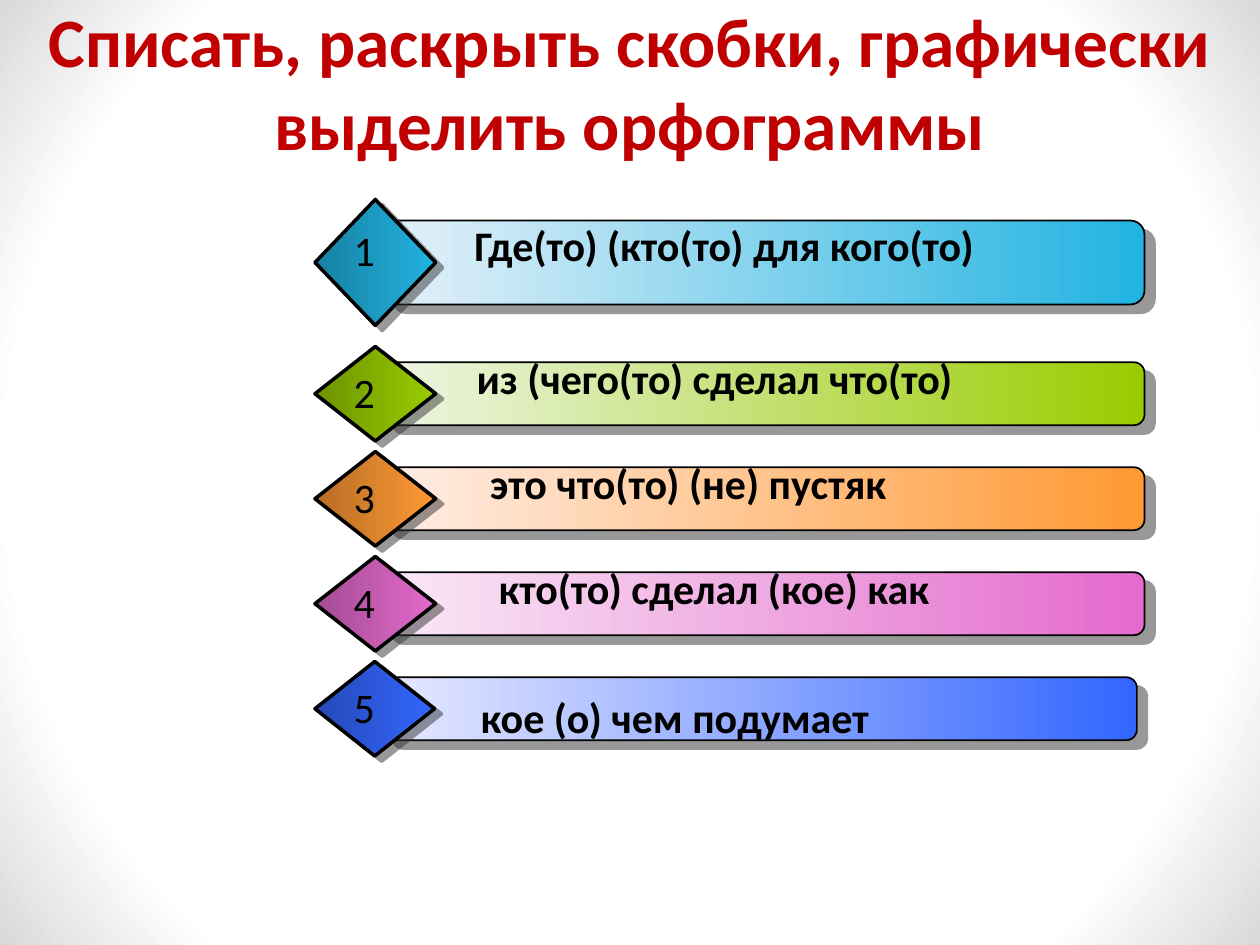
from lxml.etree import SubElement
from pptx import Presentation
from pptx.dml.color import RGBColor
from pptx.enum.shapes import MSO_SHAPE
from pptx.enum.text import MSO_ANCHOR, PP_ALIGN
from pptx.oxml.ns import qn
from pptx.util import Inches, Pt

THEME = {
    "font": "Calibri", "title": "C00000", "text": "000000", "line": "000000",
    "shadow": "333333", "page": ("FFFFFF", "D9D9D9"),
    "title_size": 39.6, "text_size": 24,
}

prs = Presentation()
prs.slide_width, prs.slide_height = Inches(10), Inches(7.5)
UNIT = prs.slide_width / 120  # grid of 120 columns by 90 rows
s = prs.slides.add_slide(prs.slide_layouts[6])


def add_panel(kind, box, colors, line=0, shadow=0, angle=0):
    """Add a gradient shape, with an optional outline and offset shadow."""
    sp = s.shapes.add_shape(kind, *(round(v * UNIT) for v in box))
    sp.fill.gradient()
    sp.fill.gradient_angle = 0
    for stop, color, pos in zip(sp.fill.gradient_stops, colors, (0, 1)):
        stop.color.rgb = RGBColor.from_string(color)
        stop.position = pos
    if line:
        sp.line.color.rgb = RGBColor.from_string(THEME["line"])
        sp.line.width = Pt(line)
    else:
        sp.line.fill.background()
    sp.shadow.inherit = False
    if shadow:
        effects = sp._element.spPr.find(qn("a:effectLst"))
        outer = SubElement(effects, qn("a:outerShdw"), dist=str(Pt(shadow)),
                           dir=str(angle * 60000), algn="ctr", rotWithShape="0")
        color = SubElement(outer, qn("a:srgbClr"), val=THEME["shadow"])
        SubElement(color, qn("a:alpha"), val="50000")
    return sp


def add_text(text, box, size, color, bold=False, wrap=True):
    """Add a one-paragraph text box."""
    tf = s.shapes.add_textbox(*(round(v * UNIT) for v in box)).text_frame
    tf.word_wrap = wrap
    p = tf.paragraphs[0]
    p.text = text
    p.font.name, p.font.size, p.font.bold = THEME["font"], Pt(size), bold
    p.font.color.rgb = RGBColor.from_string(color)
    return tf


# Page with a radial shade towards the corners
page = add_panel(MSO_SHAPE.RECTANGLE, (0, 0, 120, 90), THEME["page"])
page.fill.gradient_stops[0].position = 0.79
grad = page._element.spPr.find(qn("a:gradFill"))
grad.remove(grad.find(qn("a:lin")))
radial = SubElement(grad, qn("a:path"), path="circle")
SubElement(radial, qn("a:fillToRect"), l="50000", t="50000", r="50000", b="50000")

# Title
tf = add_text("Списать, раскрыть скобки, графически выделить орфограммы",
              (0, 1, 120, 13.5), THEME["title_size"], THEME["title"], bold=True)
tf.vertical_anchor = MSO_ANCHOR.MIDDLE
tf.paragraphs[0].alignment = PP_ALIGN.CENTER

# Rows: text, text column, text drop, width share, bar start, diamond start, main colour
ROWS = [
    ("Где(то) (кто(то) для кого(то)", 44, 1.3, 1, "E6F1F9", "1880A1", "21B3E1"),
    ("из (чего(то) сделал что(то)", 44.2, 0, 1, "EEF5E6", "6D9200", "99CC00"),
    ("это что(то) (не) пустяк", 45.5, 0, 1, "FFEEE7", "B66D24", "FF9933"),
    ("кто(то) сделал (кое) как", 46.3, 0, 1, "FAE9F6", "A34C93", "E46ACD"),
    ("кое (о) чем подумает", 44.6, 2.3, 0.99, "E7E9FF", "2449B6", "3366FF"),
]
LEFT, FIRST_TOP, PITCH = 30, 23, 10

for i, (text, col, drop, share, pale, dark, main) in enumerate(ROWS):
    # The first row is taller and stands clear of the others
    top, height = (FIRST_TOP + i * PITCH, 9) if i else (19, 12)
    bar = add_panel(MSO_SHAPE.ROUNDED_RECTANGLE,
                    (LEFT + 6.4, top + height / 6, 72.6 * share, height * 2 / 3),
                    (pale, main), line=1, shadow=7.8, angle=40)
    bar.adjustments[0] = 0.17
    add_panel(MSO_SHAPE.DIAMOND, (LEFT, top, 11.5 * share, height),
              (dark, main), line=2, shadow=5, angle=37)
    add_text(text, (col, top + drop, 57, 6), THEME["text_size"], THEME["text"], bold=True)
    add_text(str(i + 1), (LEFT + 2.5, top + height * 0.15, 6, 6),
             THEME["text_size"], THEME["text"], wrap=False)

prs.save("out.pptx")
